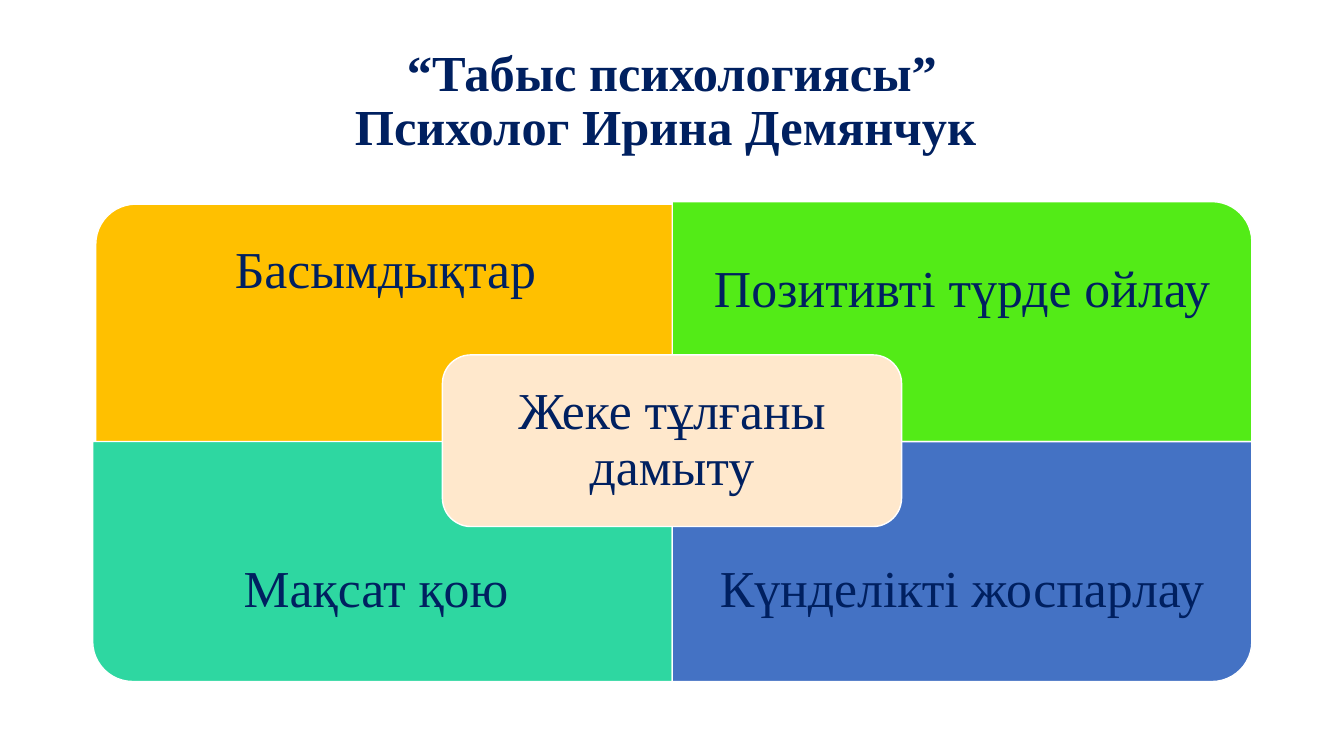
"""Build the four-quadrant slide on the psychology of success."""
from pptx import Presentation
from pptx.dml.color import RGBColor as Rgb
from pptx.enum import shapes, text
from pptx.util import Pt

HUES = {"navy": "002060", "white": "FFFFFF", "gold": "FFC000", "lime": "53EB17",
        "mint": "2ED7A1", "blue": "4472C4", "peach": "FFE8CC"}
WIDE, HIGH = 414, 171.4
LEFT, TOP = 66.2, 144
MIDX, MIDY = LEFT + WIDE, TOP + HIGH


def write(frame, words, size=37, bold=False, pad=21):
    """Fill a frame with centred navy text."""
    frame.word_wrap = True
    frame.auto_size = text.MSO_AUTO_SIZE.NONE
    frame.vertical_anchor = text.MSO_ANCHOR.MIDDLE
    frame.margin_left = frame.margin_right = Pt(pad)
    frame.margin_top = frame.margin_bottom = Pt(pad)
    para = frame.paragraphs[0]
    para.alignment = text.PP_ALIGN.CENTER
    para.line_spacing = 0.9
    for row, line in enumerate(words.split("\n")):
        if row:
            para.add_line_break()
        run = para.add_run()
        run.text = line
        run.font.name = "Times New Roman"
        run.font.size = Pt(size)
        run.font.bold = bold
        run.font.color.rgb = Rgb.from_string(HUES["navy"])


def block(kind, left, top, wide, high, hue):
    """Add a filled shape with a thin white outline."""
    shape = slide.shapes.add_shape(kind, Pt(left), Pt(top), Pt(wide), Pt(high))
    shape.shadow.inherit = False
    shape.fill.solid()
    shape.fill.fore_color.rgb = Rgb.from_string(HUES[hue])
    shape.line.color.rgb = Rgb.from_string(HUES["white"])
    shape.line.width = Pt(1)
    return shape


deck = Presentation()
deck.slide_width, deck.slide_height = Pt(960), Pt(540)
slide = deck.slides.add_slide(deck.slide_layouts[5])

title = slide.shapes.title
title.left, title.top, title.width, title.height = Pt(66), Pt(13), Pt(828), Pt(120)
write(title.text_frame, "“Табыс психологиясы”\nПсихолог Ирина Демянчук ",
      size=36, bold=True, pad=5)

quads = [
    ("Басымдықтар", "gold", LEFT + 2.2, TOP + 1.8, 270, 130),
    ("Позитивті түрде ойлау", "lime", MIDX, TOP, 0, 144),
    ("Мақсат қою ", "mint", LEFT, MIDY, 180, 358),
    ("Күнделікті жоспарлау", "blue", MIDX, MIDY, 90, 358),
]
for words, hue, left, top, turn, head in quads:
    wide, high = (HIGH, WIDE) if turn % 180 else (WIDE, HIGH)
    quad = block(shapes.MSO_SHAPE.ROUND_1_RECTANGLE, left + (WIDE - wide) / 2,
                 top + (HIGH - high) / 2, wide, high, hue)
    quad.rotation = turn
    label = slide.shapes.add_textbox(Pt(left), Pt(head), Pt(WIDE), Pt(128))
    write(label.text_frame, words)

core = block(shapes.MSO_SHAPE.ROUNDED_RECTANGLE, 316, 253.5, 328, 122.6, "peach")
write(core.text_frame, "Жеке тұлғаны дамыту", pad=17)

deck.save("out.pptx")
